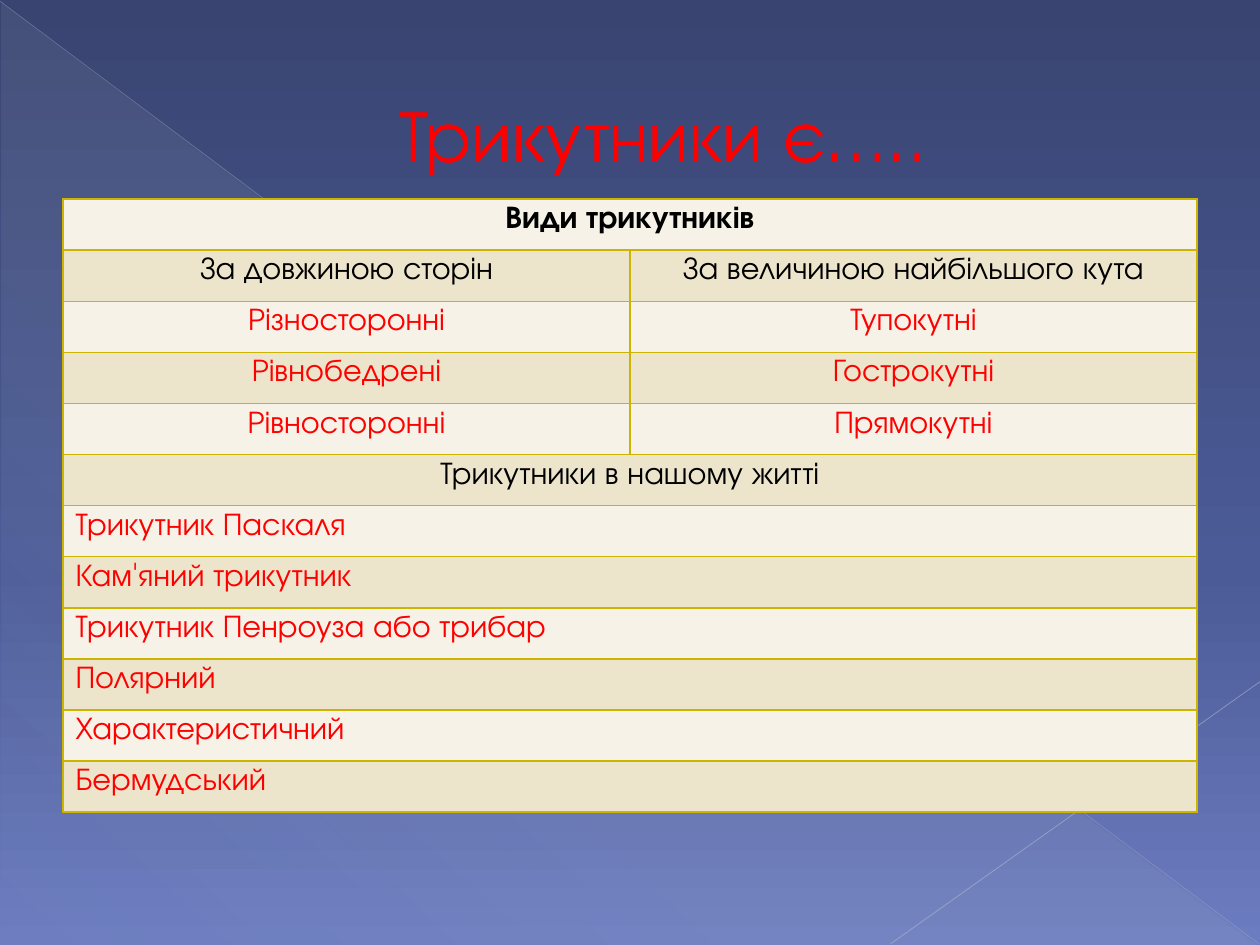
import pptx
import pptx.dml.color
import pptx.enum.shapes
import pptx.enum.text
import pptx.oxml
import pptx.oxml.ns
import pptx.util

Inches, Pt = pptx.util.Inches, pptx.util.Pt
RGBColor = pptx.dml.color.RGBColor
PP_ALIGN = pptx.enum.text.PP_ALIGN
qn = pptx.oxml.ns.qn

FONT = "TeX Gyre Adventor"
RED = RGBColor(0xFF, 0x00, 0x00)
BLACK = RGBColor(0x00, 0x00, 0x00)
BROWN = RGBColor(0x91, 0x45, 0x33)
GOLD = RGBColor(0xCC, 0xB4, 0x00)
CREAM = RGBColor(0xF6, 0xF2, 0xE7)
SAND = RGBColor(0xEC, 0xE5, 0xCC)
NAVY = RGBColor(0x39, 0x44, 0x71)
INDIGO = RGBColor(0x4B, 0x5B, 0x97)
PERIWINKLE = RGBColor(0x6C, 0x7C, 0xC0)
MIST = RGBColor(0xC5, 0xD1, 0xD7)
LONG_LINE = RGBColor(0xBA, 0xBE, 0xCD)
SHORT_LINE = RGBColor(0xC2, 0xC5, 0xD2)

ROWS = [
    ("Види трикутників",),
    ("За довжиною сторін", "За величиною найбільшого кута"),
    ("Різносторонні", "Тупокутні"),
    ("Рівнобедрені", "Гострокутні"),
    ("Рівносторонні", "Прямокутні"),
    ("Трикутники в нашому житті",),
    ("Трикутник Паскаля",),
    ("Кам'яний трикутник",),
    ("Трикутник Пенроуза або трибар",),
    ("Полярний",),
    ("Характеристичний",),
    ("Бермудський",),
]
HEADING_ROWS = (0, 1, 5)
LAST_CENTRED_ROW = 5


def xml(tag, body, attrs=""):
    """Return a DrawingML element."""
    return pptx.oxml.parse_xml(
        f'<a:{tag} {pptx.oxml.ns.nsdecls("a")} {attrs}>{body}</a:{tag}>')


def solid(color, alpha=100):
    """Return the markup of a solid fill."""
    return f"<a:solidFill>{color_xml(color, alpha)}</a:solidFill>"


def color_xml(color, alpha):
    """Return the markup of a colour with its opacity in percent."""
    return f'<a:srgbClr val="{color}"><a:alpha val="{alpha * 1000}"/></a:srgbClr>'


def set_gradient(fill, element, stops, angle):
    """Give a fill a linear gradient of (position, colour, opacity) stops."""
    fill.gradient()
    old = element.find(".//" + qn("a:gradFill"))
    marks = "".join(f'<a:gs pos="{pos * 1000}">{color_xml(color, alpha)}</a:gs>'
                    for pos, color, alpha in stops)
    new = xml("gradFill", f'<a:gsLst>{marks}</a:gsLst><a:lin ang="{angle * 60000}" scaled="0"/>',
              'rotWithShape="1"')
    old.getparent().replace(old, new)


def add_run(p, text, size, color, bold=False):
    """Add a formatted run to a paragraph."""
    r = p.add_run()
    r.text = text
    r.font.name, r.font.size, r.font.bold = FONT, Pt(size), bold
    r.font.color.rgb = color
    return r


def add_line(s, start, end, color, width, alpha):
    """Draw a thin translucent line."""
    line = s.shapes.add_connector(pptx.enum.shapes.MSO_CONNECTOR.STRAIGHT, *start, *end)
    line.line.width = Pt(width)
    line.line.color.rgb = color
    rgb = line.line._ln.find(".//" + qn("a:srgbClr"))
    rgb.append(xml("alpha", "", f'val="{alpha * 1000}"'))
    line._element.spPr.append(xml("effectLst", ""))


def add_backdrop(s, width, height):
    """Paint the background, its large triangle and the two lines."""
    set_gradient(s.background.fill, s._element,
                 [(0, NAVY, 100), (60, INDIGO, 100), (100, PERIWINKLE, 100)], 90)
    sp = s.shapes.add_shape(pptx.enum.shapes.MSO_SHAPE.RIGHT_TRIANGLE, Inches(0.01), Inches(0.02),
                            width - Inches(0.02), height - Inches(0.02))
    sp.shadow.inherit = False
    sp.line.fill.background()
    set_gradient(sp.fill, sp._element, [(0, MIST, 10), (70, MIST, 8), (100, MIST, 1)], 133)
    bottom = height - Inches(0.01)
    add_line(s, (0, Inches(0.01)), (width - Inches(0.01), bottom), LONG_LINE, 0.39, 35)
    add_line(s, (width, Inches(5.41)), (Inches(7.07), bottom), SHORT_LINE, 0.47, 45)


def add_title(s, left, top, width, height):
    """Write the outlined red title in its box."""
    tf = s.shapes.add_textbox(left, top, width, height).text_frame
    tf.word_wrap = True
    tf.vertical_anchor = pptx.enum.text.MSO_ANCHOR.MIDDLE
    p = tf.paragraphs[0]
    p.alignment = PP_ALIGN.CENTER
    p._p.get_or_add_pPr().set("marL", str(Inches(0.53)))
    r = add_run(p, "Трикутники є…..", 42, RED)
    r._r.get_or_add_rPr().insert(0, xml("ln", solid(BROWN), f'w="{Pt(0.5)}"'))


def set_borders(cell):
    """Draw gold borders on the four sides of a cell."""
    tcPr = cell._tc.get_or_add_tcPr()
    for i, side in enumerate(("lnL", "lnR", "lnT", "lnB")):
        tcPr.insert(i, xml(side, solid(GOLD), f'w="{Pt(1)}"'))


def add_triangle_table(s, left, top, width, height):
    """Fill the table of triangle kinds, merging the one-cell rows."""
    table = s.shapes.add_table(len(ROWS), 2, left, top, width, height).table
    for i, texts in enumerate(ROWS):
        for cell in table.rows[i].cells:
            cell.fill.solid()
            cell.fill.fore_color.rgb = SAND if i % 2 else CREAM
            set_borders(cell)
        if len(texts) == 1:
            table.cell(i, 0).merge(table.cell(i, 1))
        for j, text in enumerate(texts):
            p = table.cell(i, j).text_frame.paragraphs[0]
            p.alignment = PP_ALIGN.CENTER if i <= LAST_CENTRED_ROW else PP_ALIGN.LEFT
            add_run(p, text, 18, BLACK if i in HEADING_ROWS else RED, bold=i == 0)


def main():
    """Build the slide and save it."""
    prs = pptx.Presentation()
    prs.slide_width, prs.slide_height = Inches(10), Inches(7.5)
    s = prs.slides.add_slide(prs.slide_layouts[6])
    add_backdrop(s, prs.slide_width, prs.slide_height)
    add_title(s, Inches(0.5), Inches(0.29), Inches(9), Inches(1.53))
    add_triangle_table(s, Inches(0.5), Inches(1.58), Inches(9), Inches(4.87))
    prs.save("out.pptx")


if __name__ == "__main__":
    main()
